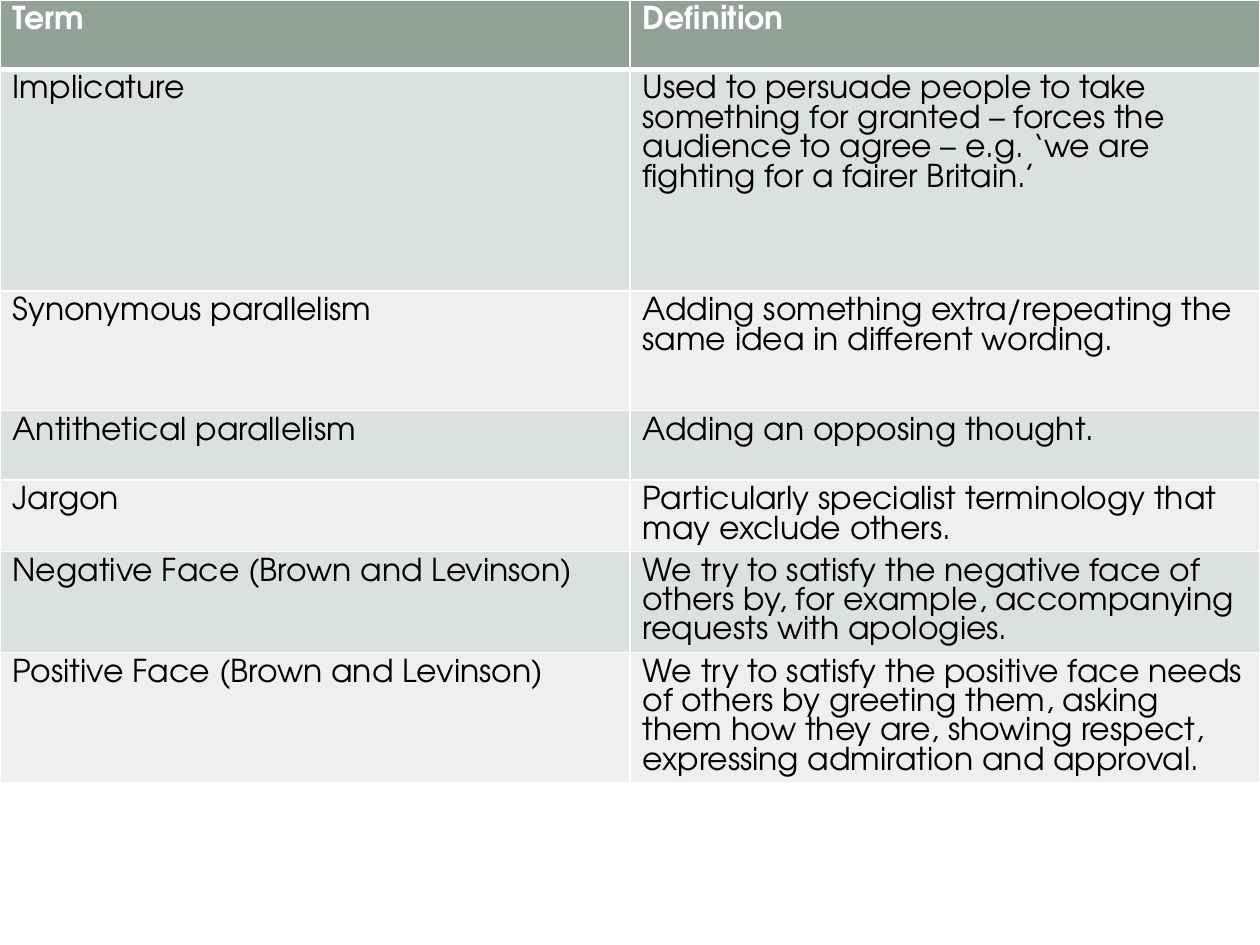
from dataclasses import dataclass

from lxml import etree
from pptx import Presentation
from pptx.dml.color import RGBColor
from pptx.oxml.ns import qn
from pptx.util import Inches, Pt

BLANK = 6


@dataclass(frozen=True)
class Theme:
    font: str = "TeX Gyre Adventor"
    size: int = 18
    head: str = "93A299"
    bands: tuple = ("EEF0EF", "DCE0DE")
    white: str = "FFFFFF"
    black: str = "000000"
    thin: int = 1
    thick: int = 3


THEME = Theme()
COLS = (5, 5)
HEIGHTS = (0.55, 1.76, 0.95, 0.55, 0.55, 0.55, 0.55)
TERMS = (
    ("Term", "Definition"),
    ("Implicature",
     "Used to persuade people to take something for granted – forces the "
     "audience to agree – e.g. ‘we are fighting for a fairer Britain.’"),
    ("Synonymous parallelism",
     "Adding something extra/repeating the same idea in different wording."),
    ("Antithetical parallelism", "Adding an opposing thought."),
    ("Jargon", "Particularly specialist terminology that may exclude others."),
    ("Negative Face (Brown and Levinson)",
     "We try to satisfy the negative face of others by, for example, "
     "accompanying requests with apologies."),
    ("Positive Face (Brown and Levinson)",
     "We try to satisfy the positive face needs of others by greeting them, "
     "asking them how they are, showing respect, expressing admiration and "
     "approval."),
)


def add_edges(cell, widths):
    """Draw white cell borders; widths maps L, R, T, B to points."""
    props = cell._tc.get_or_add_tcPr()
    for side, width in widths.items():
        line = etree.SubElement(props, qn(f"a:ln{side}"), w=str(Pt(width)))
        fill = etree.SubElement(line, qn("a:solidFill"))
        etree.SubElement(fill, qn("a:srgbClr"), val=THEME.white)


def style_text(cell, text, color, bold):
    cell.text = text
    font = cell.text_frame.paragraphs[0].runs[0].font
    look = {"name": THEME.font, "size": Pt(THEME.size), "bold": bold}
    for key, value in look.items():
        setattr(font, key, value)
    font.color.rgb = RGBColor.from_string(color)


def fill_cell(cell, text, row):
    head = row == 0
    add_edges(cell, {
        "L": THEME.thin,
        "R": THEME.thin,
        "T": THEME.thick if row == 1 else THEME.thin,
        "B": THEME.thick if head else THEME.thin,
    })
    cell.fill.solid()
    shade = THEME.head if head else THEME.bands[row % 2]
    cell.fill.fore_color.rgb = RGBColor.from_string(shade)
    style_text(cell, text, THEME.white if head else THEME.black, head)


def add_terms(slide):
    frame = slide.shapes.add_table(
        len(TERMS), len(COLS), 0, 0, Inches(sum(COLS)), Inches(sum(HEIGHTS)))
    table = frame.table
    for col, width in zip(table.columns, COLS):
        col.width = Inches(width)
    for row, height in zip(table.rows, HEIGHTS):
        row.height = Inches(height)
    for row, texts in enumerate(TERMS):
        for col, text in enumerate(texts):
            fill_cell(table.cell(row, col), text, row)


def main():
    deck = Presentation()
    deck.slide_width, deck.slide_height = Inches(10), Inches(7.5)
    add_terms(deck.slides.add_slide(deck.slide_layouts[BLANK]))
    deck.save("out.pptx")


if __name__ == "__main__":
    main()
